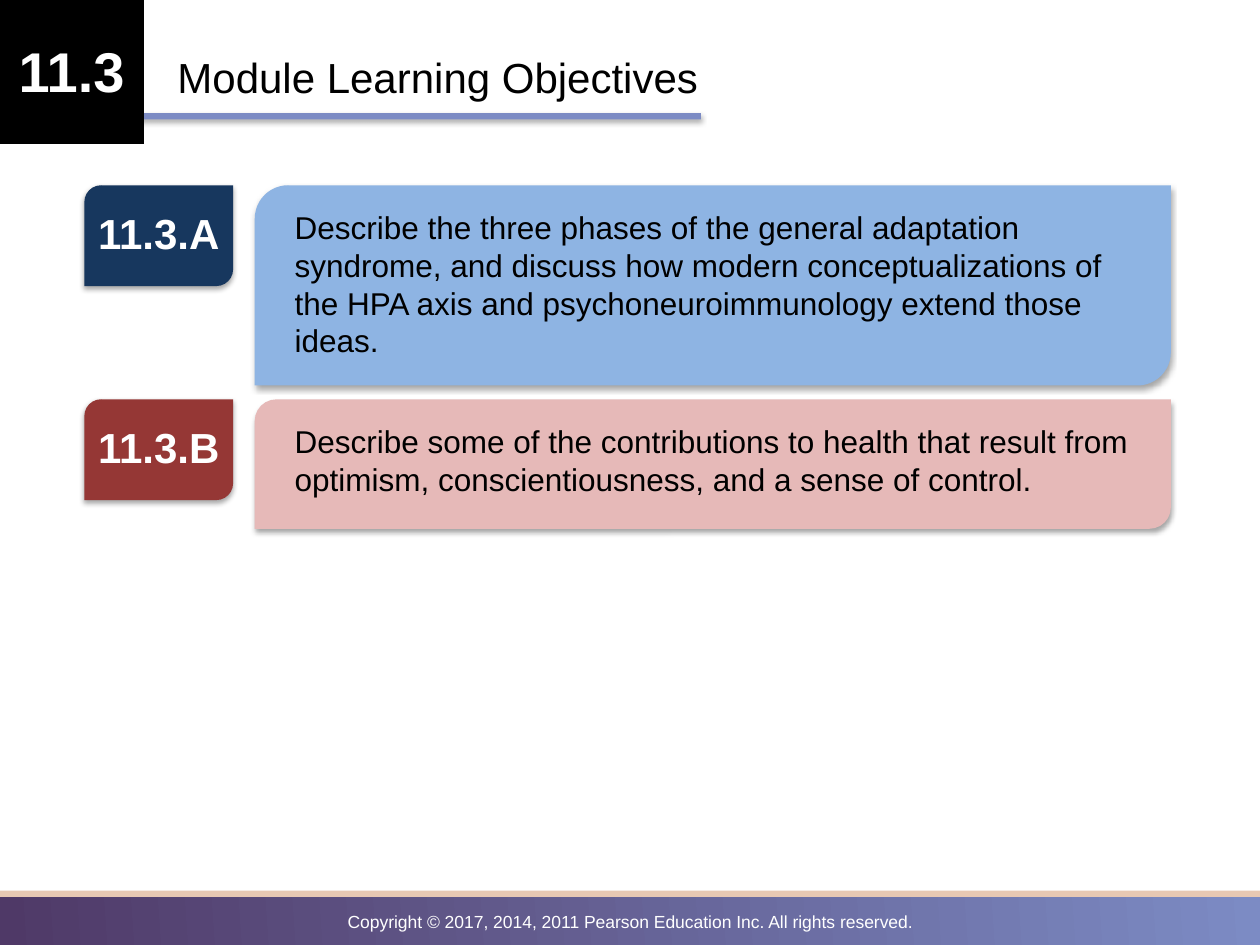
from lxml import etree
from pptx import Presentation
from pptx.dml.color import RGBColor
from pptx.enum import shapes, text
from pptx.oxml import ns
from pptx.util import Pt

RECT = shapes.MSO_SHAPE.RECTANGLE
DIAG = shapes.MSO_SHAPE.ROUND_2_DIAG_RECTANGLE
LEFT, MID = text.PP_ALIGN.LEFT, text.PP_ALIGN.CENTER


def paint(code):
    return RGBColor.from_string(code)


def shade(shape):
    """Add a soft shadow straight below the shape."""
    effects = shape._element.spPr.find(ns.qn("a:effectLst"))
    outer = etree.SubElement(
        effects, ns.qn("a:outerShdw"), blurRad=str(Pt(3.1)), dist=str(Pt(1.8)),
        dir="5400000", algn="t", rotWithShape="0")
    color = etree.SubElement(outer, ns.qn("a:srgbClr"), val="000000")
    etree.SubElement(color, ns.qn("a:alpha"), val="35000")


class Deck:
    font = "Arial"

    def __init__(self, slide):
        self.slide = slide
        self.home = slide.shapes

    def group(self):
        """Send the next elements to a new group."""
        self.home = self.slide.shapes.add_group_shape().shapes

    def ungroup(self):
        self.home = self.slide.shapes

    def box(self, area, fill, kind=RECT, shadow=False):
        shape = self.home.add_shape(kind, *map(Pt, area))
        shape.shadow.inherit = False
        shape.line.fill.background()
        shape.fill.solid()
        shape.fill.fore_color.rgb = paint(fill)
        if shadow:
            shade(shape)
        return shape

    def fade(self, area, start, end, angle):
        """Draw a rectangle with a two-colour gradient."""
        fill = self.box(area, start).fill
        fill.gradient()
        fill.gradient_angle = angle
        for stop, code, place in zip(fill.gradient_stops, (start, end), (0, 1)):
            stop.color.rgb = paint(code)
            stop.position = place

    def label(self, area, words, size, color="000000", align=LEFT, bold=False):
        frame = self.home.add_textbox(*map(Pt, area)).text_frame
        frame.word_wrap = True
        frame.text = words
        line = frame.paragraphs[0]
        line.alignment = align
        font = line.runs[0].font
        font.name, font.size, font.bold = self.font, Pt(size), bold
        font.color.rgb = paint(color)

    def goal(self, top, tall, code, words, dark, light):
        """Draw a numbered tag and its objective panel."""
        self.group()
        self.box((48.2, top, 85, 57.6), dark, DIAG, True)
        self.label((48.2, top + 9.4, 85, 36), code, 24, "FFFFFF", MID, True)
        self.group()
        self.box((145.6, top, 523.5, tall), light, DIAG, True)
        self.label((161.3, top + 9.4, 503.3, tall - 20), words, 18)
        self.ungroup()


def main():
    show = Presentation()
    show.slide_width, show.slide_height = Pt(720), Pt(540)
    deck = Deck(show.slides.add_slide(show.slide_layouts[6]))

    deck.fade((0, 509.8, 720, 32.4), "4F3967", "7C8BC4", 4)
    deck.box((0, 509, 723.6, 3.6), "E7C8B3")
    deck.label((0, 517, 720, 19.4),
               "Copyright © 2017, 2014, 2011 Pearson Education Inc. All rights reserved.",
               10, "FFFFFF", MID)

    deck.box((-14.4, 64.6, 415, 3.6), "7C8BC4", shadow=True)
    deck.group()
    deck.box((-0.5, -0.5, 82.8, 82.8), "000000")
    deck.label((-0.5, 17.3, 82.8, 46), "11.3", 32, "FFFFFF", MID, True)
    deck.ungroup()
    deck.label((94.3, 26, 555, 36), "Module Learning Objectives", 24)

    deck.goal(105.9, 114.4, "11.3.A",
              "Describe the three phases of the general adaptation syndrome, "
              "and discuss how modern conceptualizations of the HPA axis and "
              "psychoneuroimmunology extend those ideas.", "17375E", "8EB4E3")
    deck.goal(228.2, 74, "11.3.B",
              "Describe some of the contributions to health that result from "
              "optimism, conscientiousness, and a sense of control.",
              "953735", "E6B9B8")
    show.save("out.pptx")


if __name__ == "__main__":
    main()
